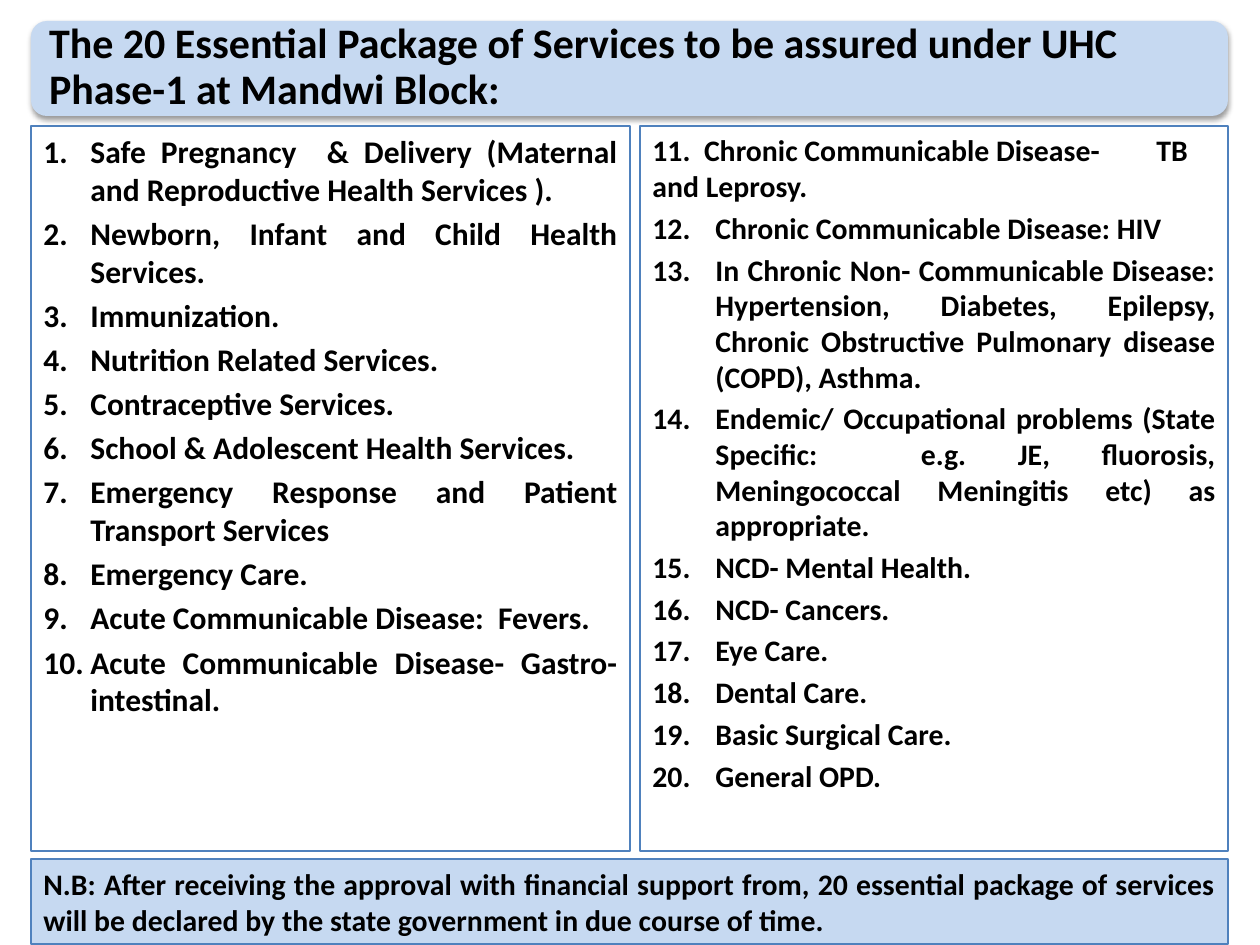
import pptx
import pptx.util
import pptx.dml.color
import pptx.enum.shapes
import pptx.enum.text
import lxml.etree
import pptx.oxml.ns

TITLE = "The 20 Essential Package of Services to be assured under UHC Phase-1 at Mandwi Block:"
FIRST_SERVICES = [
    "Safe Pregnancy  & Delivery (Maternal and Reproductive Health Services ).",
    "Newborn, Infant and Child Health Services.",
    "Immunization.",
    "Nutrition Related Services.",
    "Contraceptive Services.",
    "School & Adolescent Health Services.",
    "Emergency Response and Patient Transport Services",
    "Emergency Care.",
    "Acute Communicable Disease:  Fevers.",
    "Acute Communicable Disease- Gastro-intestinal.",
]
SERVICE_11 = "11.  Chronic Communicable Disease-\tTB and Leprosy."
LAST_SERVICES = [
    "Chronic Communicable Disease: HIV",
    "In Chronic Non- Communicable Disease: Hypertension, Diabetes, Epilepsy, "
    "Chronic Obstructive Pulmonary disease (COPD), Asthma.",
    "Endemic/ Occupational problems (State Specific:  e.g. JE, fluorosis, "
    "Meningococcal Meningitis etc) as appropriate.",
    "NCD- Mental Health.",
    "NCD- Cancers.",
    "Eye Care.",
    "Dental Care.",
    "Basic Surgical Care.",
    "General OPD.",
]
NOTE = ("N.B: After receiving the approval with financial support from, 20 essential package "
        "of services will be declared by the state government in due course of time.")

PX = 914400 / 126
LEFT, WIDTH = 31, 1197
COLUMN_TOP, COLUMN_HEIGHT = 126, 725
FIRST_WIDTH, COLUMN_GAP = 599, 10
PALE_BLUE, BLUE, BLACK = "C6D9F1", "4F81BD", "000000"
JUSTIFY = pptx.enum.text.PP_ALIGN.JUSTIFY
SHAPES = pptx.enum.shapes.MSO_SHAPE
MIDDLE = pptx.enum.text.MSO_ANCHOR.MIDDLE


def px(length):
    return pptx.util.Emu(round(length * PX))


def color(value):
    return pptx.dml.color.RGBColor.from_string(value)


def add_panel(slide, box, fill=None, line=None, preset=SHAPES.RECTANGLE):
    panel = slide.shapes.add_shape(preset, *map(px, box))
    panel.shadow.inherit = False
    if fill:
        panel.fill.solid()
        panel.fill.fore_color.rgb = color(fill)
    else:
        panel.fill.background()
    if line:
        panel.line.color.rgb = color(line)
        panel.line.width = pptx.util.Pt(0.75)
    else:
        panel.line.fill.background()
    panel.text_frame.word_wrap = True
    panel.text_frame.vertical_anchor = pptx.enum.text.MSO_ANCHOR.TOP
    return panel


def add_soft_shadow(panel):
    effects = panel.element.spPr.find(pptx.oxml.ns.qn("a:effectLst"))
    shadow = lxml.etree.SubElement(
        effects, pptx.oxml.ns.qn("a:outerShdw"), blurRad=str(pptx.util.Pt(3.1)),
        dist=str(pptx.util.Pt(1.6)), dir="5400000", rotWithShape="0")
    tint = lxml.etree.SubElement(shadow, pptx.oxml.ns.qn("a:srgbClr"), val=BLACK)
    lxml.etree.SubElement(tint, pptx.oxml.ns.qn("a:alpha"), val="38000")


def write(frame, texts, size, align=JUSTIFY, space=0.0):
    """Fill the frame with bold paragraphs; space is a share of the text size."""
    frame.text = "\n".join(texts)
    for paragraph in frame.paragraphs:
        paragraph.alignment = align
        paragraph.space_before = pptx.util.Pt(size * space)
        paragraph.font.name = "Calibri"
        paragraph.font.size = pptx.util.Pt(size)
        paragraph.font.bold = True
        paragraph.font.color.rgb = color(BLACK)


def number(paragraphs, start, indent):
    """Number the paragraphs from start with a hanging indent in px."""
    for paragraph in paragraphs:
        properties = paragraph._p.get_or_add_pPr()
        properties.set("marL", str(px(indent)))
        properties.set("indent", str(-px(indent)))
        numbering = lxml.etree.SubElement(
            properties, pptx.oxml.ns.qn("a:buAutoNum"), type="arabicPeriod")
        if start > 1:
            numbering.set("startAt", str(start))
        # numbering has to come before the default run properties
        properties.append(properties.find(pptx.oxml.ns.qn("a:defRPr")))


def main():
    deck = pptx.Presentation()
    deck.slide_width, deck.slide_height = px(1260), px(945)
    slide = deck.slides.add_slide(deck.slide_layouts[6])

    banner = add_panel(slide, (LEFT, 21, WIDTH, 95), PALE_BLUE,
                       preset=SHAPES.ROUNDED_RECTANGLE)
    add_soft_shadow(banner)
    title = slide.shapes.add_textbox(*map(px, (37, 25, 1188, 86))).text_frame
    title.word_wrap = True
    title.vertical_anchor = MIDDLE
    title.margin_left = title.margin_right = px(12)
    title.margin_top = title.margin_bottom = px(12)
    write(title, [TITLE], 24, pptx.enum.text.PP_ALIGN.LEFT)
    title.paragraphs[0].line_spacing = 0.9

    first = add_panel(slide, (LEFT, COLUMN_TOP, FIRST_WIDTH, COLUMN_HEIGHT),
                      line=BLUE).text_frame
    write(first, FIRST_SERVICES, 18, space=0.2)
    number(first.paragraphs, 1, 47)

    offset = FIRST_WIDTH + COLUMN_GAP
    last = add_panel(slide, (LEFT + offset, COLUMN_TOP, WIDTH - offset, COLUMN_HEIGHT),
                     line=BLUE).text_frame
    write(last, [SERVICE_11] + LAST_SERVICES, 17, space=0.2)
    last.paragraphs[0].alignment = pptx.enum.text.PP_ALIGN.LEFT
    number(last.paragraphs[1:], 12, 63)

    note = add_panel(slide, (LEFT, 859, WIDTH, 85), PALE_BLUE, BLUE).text_frame
    note.vertical_anchor = MIDDLE
    write(note, [NOTE], 17)

    deck.save("out.pptx")


if __name__ == "__main__":
    main()
